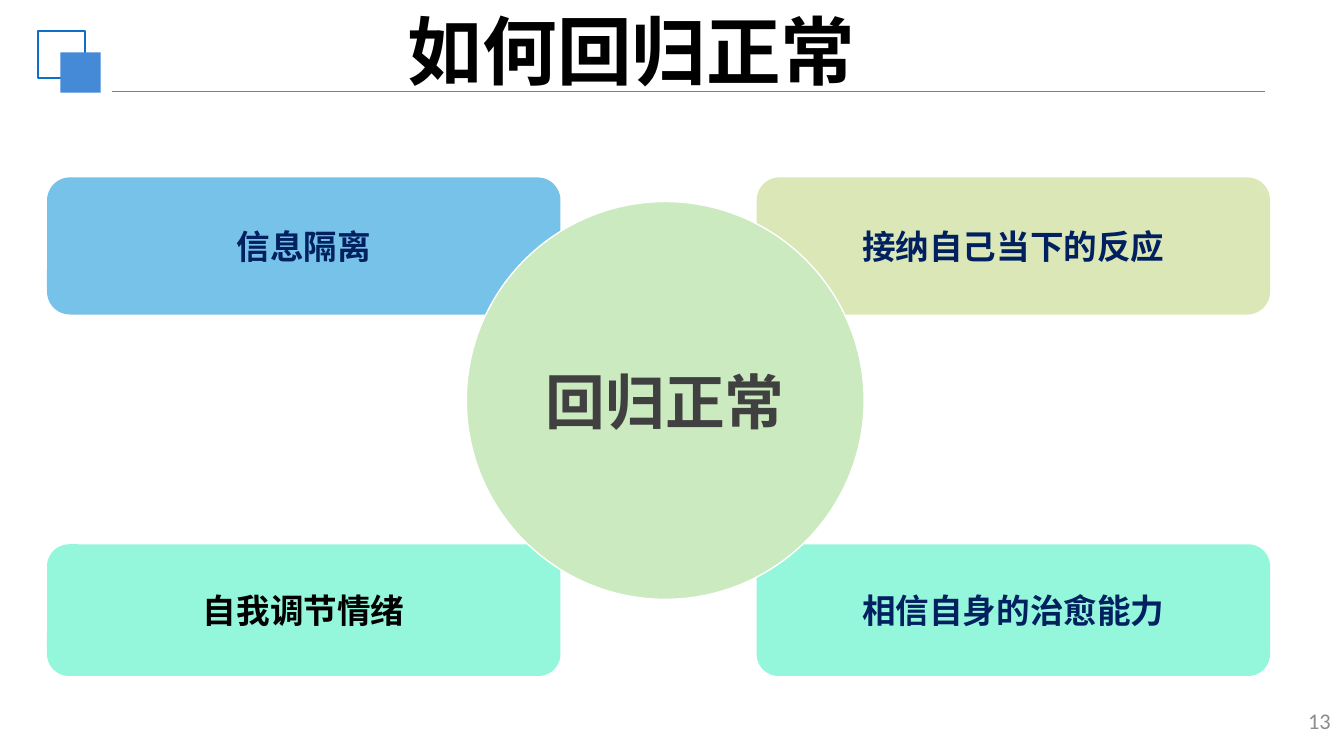
from dataclasses import dataclass

from lxml.etree import SubElement
from pptx import Presentation
from pptx.dml.color import RGBColor
from pptx.enum.shapes import MSO_CONNECTOR, MSO_SHAPE
from pptx.enum.text import MSO_ANCHOR, MSO_AUTO_SIZE, PP_ALIGN
from pptx.oxml.ns import qn
from pptx.util import Inches, Pt


@dataclass(frozen=True)
class Theme:
    cjk: str = "Noto Sans CJK SC"
    latin: str = "Arial"
    number_font: str = "Calibri"
    black: str = "000000"
    navy: str = "002060"
    dark: str = "404040"
    gray: str = "8C8C8C"
    rule: str = "808080"
    white: str = "FFFFFF"
    outline: str = "0F6FC6"
    blue: str = "448AD7"
    sky: str = "77C2E8"
    olive: str = "DBE7B6"
    mint: str = "94F7DC"
    green: str = "CBEAC0"
    title_size: int = 40
    center_size: int = 32
    card_size: int = 18
    number_size: int = 12


THEME = Theme()
CARD_LEFTS = (0.35, 5.63)
CARD_ROWS = ((1.32, 1.02), (4.05, 0.98))  # top, height
CARD_WIDTH = 3.82
CARDS = (
    (("信息隔离", THEME.sky, THEME.navy, THEME.latin),
     ("接纳自己当下的反应", THEME.olive, THEME.navy, THEME.latin)),
    (("自我调节情绪", THEME.mint, THEME.black, THEME.cjk),
     ("相信自身的治愈能力", THEME.mint, THEME.navy, THEME.latin)),
)


def rgb(value):
    return RGBColor.from_string(value)


def write(sp, text, size, color, font=THEME.cjk, bold=True, align=PP_ALIGN.CENTER):
    tf = sp.text_frame
    tf.text = text
    tf.word_wrap = True
    tf.auto_size = MSO_AUTO_SIZE.NONE
    tf.vertical_anchor = MSO_ANCHOR.MIDDLE
    p = tf.paragraphs[0]
    p.alignment = align
    r = p.runs[0]
    r.font.size = Pt(size)
    r.font.bold = bold
    r.font.color.rgb = rgb(color)
    r.font.name = font
    SubElement(r.font._element, qn("a:ea"), typeface=THEME.cjk)


def add_block(s, kind, box, fill=None, line=None, line_width=0.75):
    sp = s.shapes.add_shape(kind, *map(Inches, box))
    sp.shadow.inherit = False
    if fill:
        sp.fill.solid()
        sp.fill.fore_color.rgb = rgb(fill)
    else:
        sp.fill.background()
    if line:
        sp.line.color.rgb = rgb(line)
        sp.line.width = Pt(line_width)
    else:
        sp.line.fill.background()
    return sp


def add_header_decoration(s):
    rule = s.shapes.add_connector(
        MSO_CONNECTOR.STRAIGHT, *map(Inches, (0.83, 0.68, 9.41, 0.68)))
    rule.line.color.rgb = rgb(THEME.rule)
    rule.line.width = Pt(0.75)
    SubElement(rule._element.spPr, qn("a:effectLst"))
    add_block(s, MSO_SHAPE.RECTANGLE, (0.28, 0.23, 0.35, 0.35),
              line=THEME.outline, line_width=1)
    add_block(s, MSO_SHAPE.RECTANGLE, (0.45, 0.39, 0.3, 0.3), THEME.blue)


def add_title(s, text):
    title = s.shapes.title
    title.left, title.top, title.width, title.height = map(
        Inches, (0.2, -0.1, 9, 0.94))
    write(title, text, THEME.title_size, THEME.black)


def add_page_number(s, number):
    box = s.shapes.add_textbox(*map(Inches, (7.67, 5.21, 2.33, 0.3)))
    write(box, number, THEME.number_size, THEME.gray, THEME.number_font,
          bold=False, align=PP_ALIGN.RIGHT)


def add_cards(s):
    for (top, height), row in zip(CARD_ROWS, CARDS):
        for left, (text, fill, color, font) in zip(CARD_LEFTS, row):
            card = add_block(s, MSO_SHAPE.ROUNDED_RECTANGLE,
                             (left, top, CARD_WIDTH, height), fill)
            write(card, text, THEME.card_size, color, font)


def add_center(s, text):
    circle = add_block(s, MSO_SHAPE.OVAL, (3.47, 1.5, 2.96, 2.96),
                       THEME.green, THEME.white)
    write(circle, text, THEME.center_size, THEME.dark)


def main():
    prs = Presentation()
    prs.slide_width = Inches(10)
    prs.slide_height = Inches(10 * 9 / 16)
    s = prs.slides.add_slide(prs.slide_layouts.get_by_name("Title Only"))
    add_header_decoration(s)
    add_title(s, "如何回归正常")
    add_page_number(s, "13")
    add_cards(s)
    add_center(s, "回归正常")
    prs.save("out.pptx")


if __name__ == "__main__":
    main()
